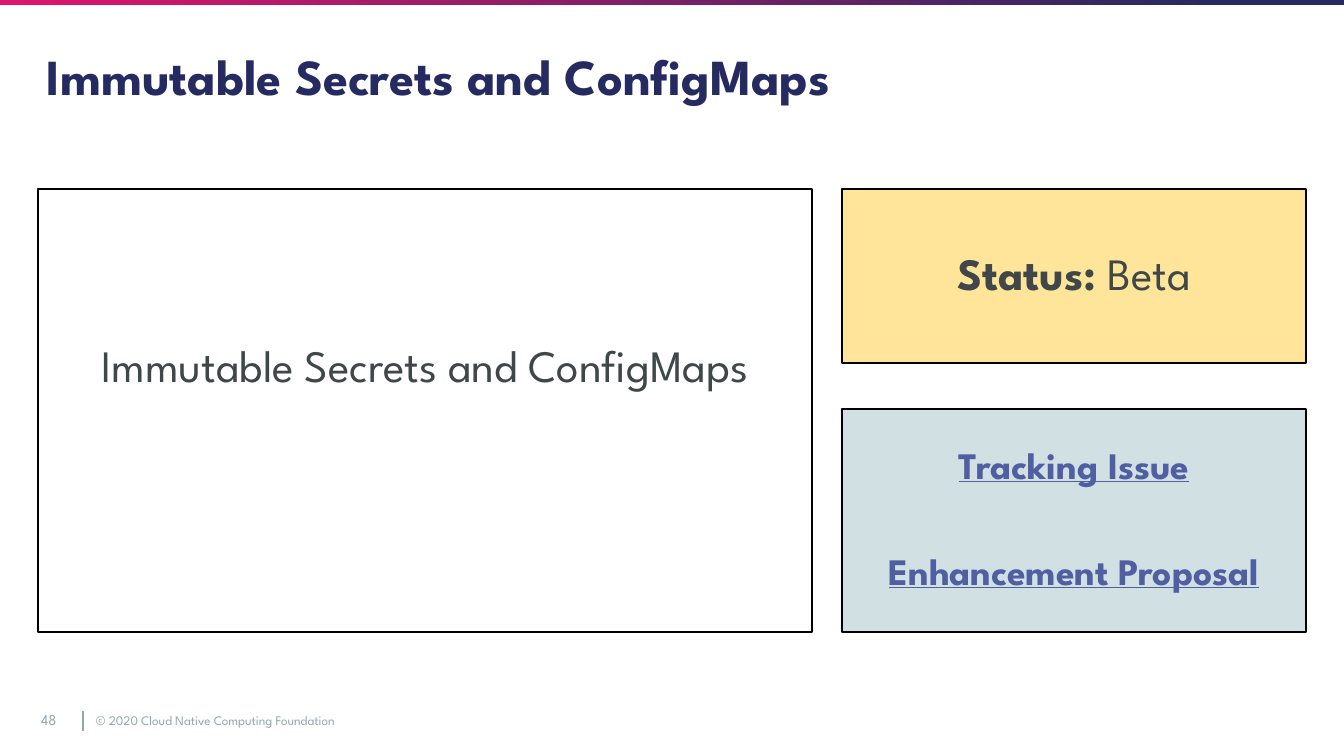
from pptx import Presentation
from pptx.dml.color import RGBColor as RGB
from pptx.enum.shapes import MSO_CONNECTOR as Conn, MSO_SHAPE as Kind
from pptx.enum.text import MSO_ANCHOR as Anchor, PP_ALIGN as Align
from pptx.oxml.ns import qn
from pptx.util import Pt
from lxml.etree import SubElement

PX = 914400 / 134.4
COLORS = {
    "pink": "DF156C", "navy": "252A60", "gray": "8EA8AF", "text": "3F4749",
    "link": "515EA1", "blue": "D0E0E3", "gold": "FFE599", "black": "000000",
}


def px(*nums):
    return [round(n * PX) for n in nums]


def write(shape, paras, size, color, align=Align.LEFT, under=False,
          pad=(9, 9, 9, 9), gap=0, line=0.9):
    """Fill a shape with paragraphs, each a list of (text, bold) runs."""
    frame = shape.text_frame
    frame.word_wrap = True
    frame.vertical_anchor = Anchor.MIDDLE
    (frame.margin_left, frame.margin_top,
     frame.margin_right, frame.margin_bottom) = px(*pad)
    for i, runs in enumerate(paras):
        para = frame.add_paragraph() if i else frame.paragraphs[0]
        para.alignment = align
        para.line_spacing = line
        if i:
            para.space_before = Pt(gap)
        for text, bold in runs:
            run = para.add_run()
            run.text = text
            font = run.font
            font.name = "League Spartan"
            font.size = Pt(size)
            font.bold = bold
            font.underline = under
            font.color.rgb = RGB.from_string(COLORS[color])


deck = Presentation()
deck.slide_width, deck.slide_height = px(1344, 756)
slide = deck.slides.add_slide(deck.slide_layouts[6])
shapes = slide.shapes

# Top bar
bar = shapes.add_shape(Kind.RECTANGLE, *px(0, 0, 1344, 5))
bar.shadow.inherit = False
bar.line.fill.background()
bar.fill.gradient()
bar.fill.gradient_angle = 0
for stop, (spot, name) in zip(bar.fill.gradient_stops, [(0, "pink"), (0.91, "navy")]):
    stop.position = spot
    stop.color.rgb = RGB.from_string(COLORS[name])

# Footer
foot = (9, 5, 9, 5)
note = shapes.add_textbox(*px(87, 700, 454, 40))
write(note, [[("© 2020 Cloud Native Computing Foundation", False)]], 7, "gray",
      pad=foot, line=1.0)
page = shapes.add_textbox(*px(20, 700, 58, 40))
write(page, [[("48", False)]], 8, "gray", align=Align.CENTER, pad=foot, line=1.0)
rule = shapes.add_connector(Conn.STRAIGHT, *px(83, 711, 83, 731))
rule.line.color.rgb = RGB.from_string(COLORS["gray"])
rule.line.width = Pt(1)
SubElement(rule._element.spPr, qn("a:effectLst"))

title = shapes.add_textbox(*px(38, 47, 1268, 65))
write(title, [[("Immutable Secrets and ConfigMaps", True)]], 27, "navy")

# Panels: place, fill, paragraphs, text format
panels = [
    ((38, 189, 774, 443), None, [[("Immutable Secrets and ConfigMaps", False)]],
     dict(size=24, color="text", pad=(9, 9, 9, 93))),
    ((842, 409, 464, 223), "blue",
     [[("Tracking Issue", True)], [("Enhancement Proposal", True)]],
     dict(size=20, color="link", under=True, gap=35)),
    ((842, 189, 464, 174), "gold", [[("Status:", True), (" Beta", False)]],
     dict(size=24, color="text")),
]
for place, fill, paras, style in panels:
    panel = shapes.add_shape(Kind.RECTANGLE, *px(*place))
    panel.shadow.inherit = False
    panel.line.color.rgb = RGB.from_string(COLORS["black"])
    panel.line.width = Pt(0.75)
    if fill:
        panel.fill.solid()
        panel.fill.fore_color.rgb = RGB.from_string(COLORS[fill])
    else:
        panel.fill.background()
    write(panel, paras, align=Align.CENTER, **style)

deck.save("out.pptx")
